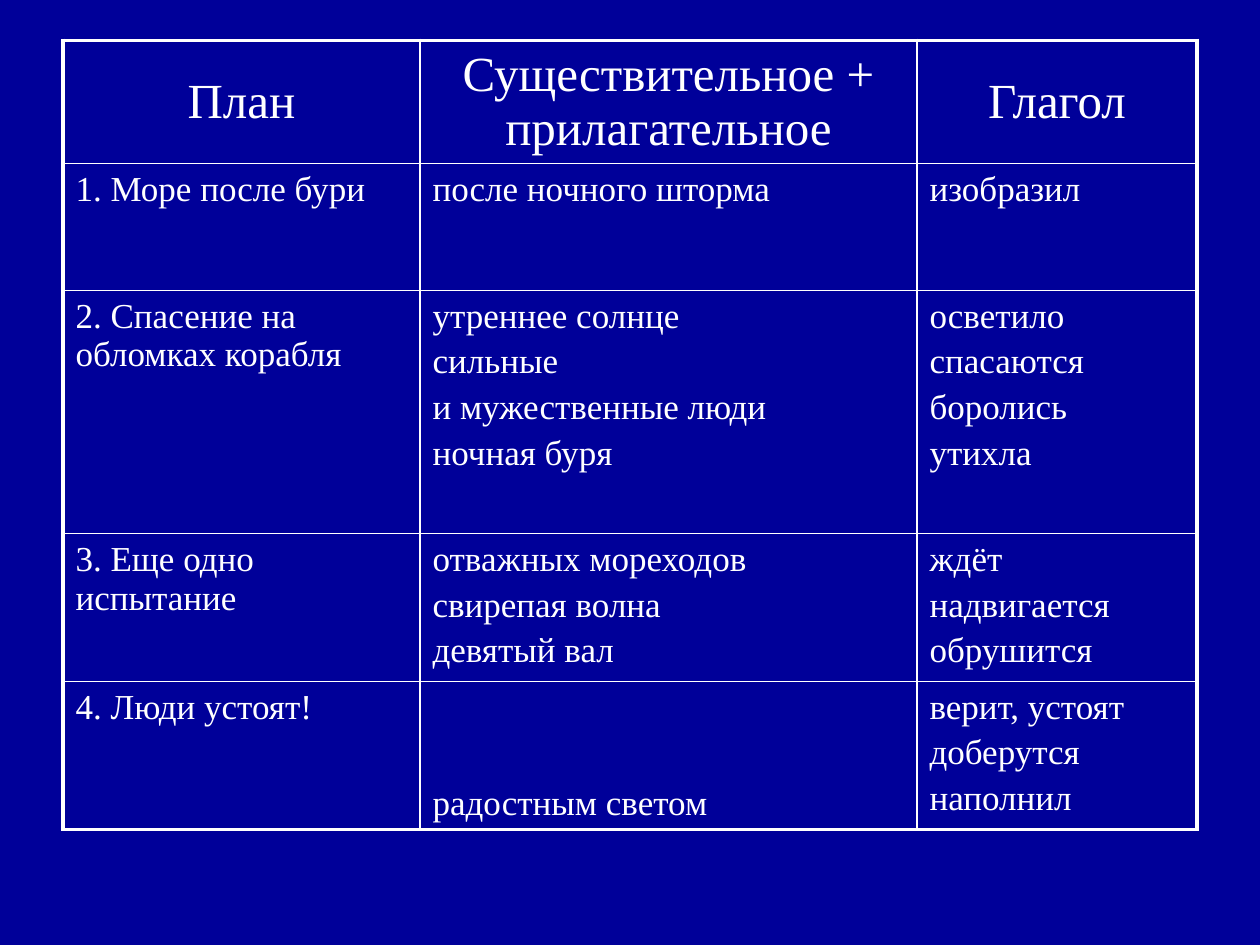
from dataclasses import dataclass

from lxml import etree
from pptx import Presentation
from pptx.dml.color import RGBColor
from pptx.enum import text
from pptx.oxml import ns
from pptx.util import Pt


@dataclass(frozen=True)
class Theme:
    back: str = "000099"
    ink: str = "FFFFFF"
    face: str = "Times New Roman"
    head: float = 28
    body: float = 20
    gap: float = 4
    thin: float = 1
    thick: float = 2.25


@dataclass(frozen=True)
class Entry:
    lines: tuple[str, ...]
    size: float
    align: text.PP_ALIGN = text.PP_ALIGN.LEFT
    anchor: text.MSO_ANCHOR = text.MSO_ANCHOR.TOP


THEME = Theme()
LEFT, TOP = 36, 23
COLS = (204, 284, 160)
ROWS = (70.5, 72.5, 139, 84.5, 84.5)


def title(words: str) -> Entry:
    return Entry((words,), THEME.head, text.PP_ALIGN.CENTER, text.MSO_ANCHOR.MIDDLE)


def item(*lines: str, anchor: text.MSO_ANCHOR = text.MSO_ANCHOR.TOP) -> Entry:
    return Entry(lines, THEME.body, anchor=anchor)


GRID = (
    (title("План"), title("Существительное + прилагательное"), title("Глагол")),
    (item("1. Море после бури"), item("после ночного шторма"), item("изобразил")),
    (
        item("2. Спасение на обломках корабля"),
        item("утреннее солнце", "сильные", "и мужественные люди", "ночная буря"),
        item("осветило", "спасаются", "боролись", "утихла"),
    ),
    (
        item("3. Еще одно испытание"),
        item("отважных мореходов", "свирепая волна", "девятый вал"),
        item("ждёт", "надвигается", "обрушится"),
    ),
    (
        item("4. Люди устоят!"),
        item("радостным светом", anchor=text.MSO_ANCHOR.BOTTOM),
        item("верит, устоят", "доберутся", "наполнил"),
    ),
)


def border(cell, row: int, col: int) -> None:
    edges = {
        "L": col == 0,
        "R": col == len(COLS) - 1,
        "T": row == 0,
        "B": row == len(ROWS) - 1,
    }
    props = cell._tc.get_or_add_tcPr()
    for side, outer in edges.items():
        width = Pt(THEME.thick if outer else THEME.thin)
        line = etree.SubElement(props, ns.qn(f"a:ln{side}"), w=str(int(width)))
        fill = etree.SubElement(line, ns.qn("a:solidFill"))
        etree.SubElement(fill, ns.qn("a:srgbClr"), val=THEME.ink)


def write(cell, entry: Entry) -> None:
    cell.vertical_anchor = entry.anchor
    frame = cell.text_frame
    for index, words in enumerate(entry.lines):
        para = frame.add_paragraph() if index else frame.paragraphs[0]
        para.alignment = entry.align
        if index:
            para.space_before = Pt(THEME.gap)
        run = para.add_run()
        run.text = words
        run.font.color.rgb = RGBColor.from_string(THEME.ink)
        for name, value in {"name": THEME.face, "size": Pt(entry.size)}.items():
            setattr(run.font, name, value)


def draw(slide) -> None:
    table = slide.shapes.add_table(
        len(ROWS), len(COLS), Pt(LEFT), Pt(TOP), Pt(sum(COLS)), Pt(sum(ROWS))
    ).table
    for name, value in {"first_row": False, "horz_banding": False}.items():
        setattr(table, name, value)
    for col, width in zip(table.columns, COLS):
        col.width = Pt(width)
    for row, height in zip(table.rows, ROWS):
        row.height = Pt(height)
    for y, entries in enumerate(GRID):
        for x, entry in enumerate(entries):
            cell = table.cell(y, x)
            border(cell, y, x)
            cell.fill.background()
            write(cell, entry)


def main() -> None:
    deck = Presentation()
    for name, value in {"slide_width": Pt(720), "slide_height": Pt(540)}.items():
        setattr(deck, name, value)
    slide = deck.slides.add_slide(deck.slide_layouts[6])
    fill = slide.background.fill
    fill.solid()
    fill.fore_color.rgb = RGBColor.from_string(THEME.back)
    draw(slide)
    deck.save("out.pptx")


if __name__ == "__main__":
    main()
